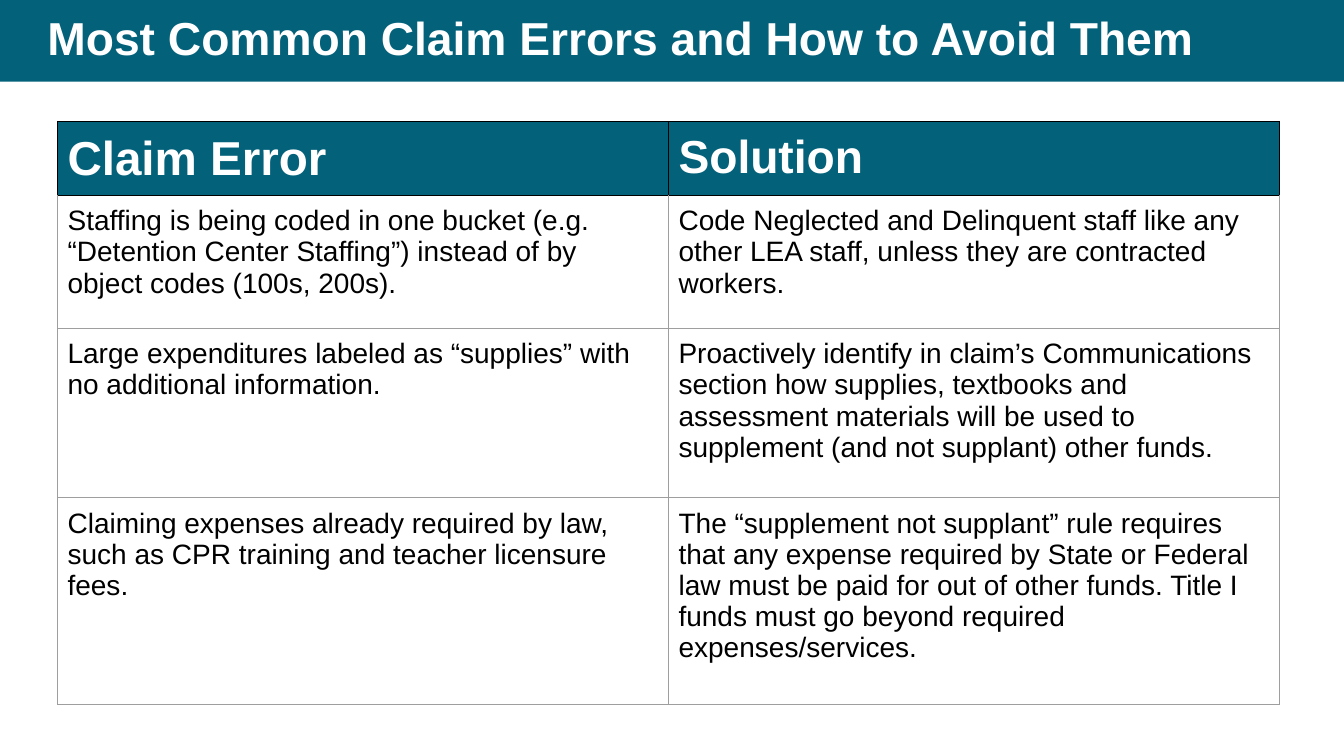
"""Build a slide that pairs common claim errors with their solutions."""
from lxml import etree
from pptx import Presentation
from pptx.dml.color import RGBColor
from pptx.enum.shapes import MSO_SHAPE as Shape
from pptx.enum.text import MSO_ANCHOR as Anchor, PP_ALIGN as Align
from pptx.oxml.ns import qn
from pptx.util import Inches, Pt

COLORS = {"teal": "03617A", "white": "FFFFFF", "black": "000000", "gray": "9E9E9E"}
FONT = "Arial"
TITLE = "Most Common Claim Errors and How to Avoid Them"
HEADINGS = [("Claim Error", 34), ("Solution", 33)]
ERRORS = [
    ("Staffing is being coded in one bucket (e.g. “Detention Center Staffing”) "
     "instead of by object codes (100s, 200s).",
     "Code Neglected and Delinquent staff like any other LEA staff, "
     "unless they are contracted workers."),
    ("Large expenditures labeled as “supplies” with no additional information.",
     "Proactively identify in claim’s Communications section how supplies, "
     "textbooks and assessment materials will be used to supplement "
     "(and not supplant) other funds."),
    ("Claiming expenses already required by law, such as CPR training "
     "and teacher licensure fees.",
     "The “supplement not supplant” rule requires that any expense required by "
     "State or Federal law must be paid for out of other funds. Title I funds "
     "must go beyond required expenses/services."),
]
ROW_HEIGHTS = [0.72, 1.32, 1.68, 2.05]
COLUMN_WIDTH = 6.06
BAND_HEIGHT = 0.81


def rgb(name):
    """Return the named palette colour."""
    return RGBColor.from_string(COLORS[name])


def write(frame, text, size=20, color="black", bold=False, spacing=1.0):
    """Write one formatted paragraph into a text frame."""
    frame.word_wrap = True
    paragraph = frame.paragraphs[0]
    paragraph.alignment = Align.LEFT
    paragraph.line_spacing = spacing
    run = paragraph.add_run()
    run.text = text
    run.font.name = FONT
    run.font.size = Pt(size)
    run.font.bold = bold
    run.font.color.rgb = rgb(color)


def add_band(slide, width):
    """Add the header band behind everything else."""
    band = slide.shapes.add_shape(Shape.RECTANGLE, 0, 0, width, Inches(BAND_HEIGHT))
    band.shadow.inherit = False
    band.fill.solid()
    band.fill.fore_color.rgb = rgb("teal")
    band.line.fill.background()
    slide.shapes._spTree.insert(2, band._element)


def set_title(slide):
    """Place and fill the title placeholder."""
    title = slide.shapes.title
    title.left, title.top = Inches(0.37), Inches(0)
    title.width, title.height = Inches(12.32), Inches(BAND_HEIGHT)
    title.text_frame.vertical_anchor = Anchor.MIDDLE
    write(title.text_frame, TITLE, size=33, color="white", bold=True, spacing=0.9)


def set_borders(cell, top, others):
    """Draw the four cell borders, the top one in its own colour."""
    properties = cell._tc.get_or_add_tcPr()
    sides = [("a:lnL", others), ("a:lnR", others), ("a:lnT", top), ("a:lnB", others)]
    for position, (side, color) in enumerate(sides):
        line = etree.Element(qn(side), w=str(Pt(0.75)))
        fill = etree.SubElement(line, qn("a:solidFill"))
        etree.SubElement(fill, qn("a:srgbClr"), val=COLORS[color])
        properties.insert(position, line)


def fill_cell(cell, text, fill="white", top="gray", others="gray", **text_format):
    """Format one table cell and write its text."""
    cell.margin_left = cell.margin_right = Inches(0.1)
    cell.margin_top = cell.margin_bottom = Inches(0.1)
    cell.vertical_anchor = Anchor.TOP
    cell.fill.solid()
    cell.fill.fore_color.rgb = rgb(fill)
    set_borders(cell, top, others)
    write(cell.text_frame, text, **text_format)


def add_error_table(slide):
    """Add the table of errors and solutions."""
    frame = slide.shapes.add_table(
        len(ROW_HEIGHTS), len(HEADINGS), Inches(0.57), Inches(1.21),
        Inches(COLUMN_WIDTH * len(HEADINGS)), Inches(sum(ROW_HEIGHTS)))
    table = frame.table
    table.horz_banding = False
    for column in table.columns:
        column.width = Inches(COLUMN_WIDTH)
    for row, height in zip(table.rows, ROW_HEIGHTS):
        row.height = Inches(height)
    for column, (heading, size) in enumerate(HEADINGS):
        fill_cell(table.cell(0, column), heading, fill="teal", top="black",
                  others="black", size=size, color="white", bold=True)
    for row, pair in enumerate(ERRORS, start=1):
        for column, text in enumerate(pair):
            fill_cell(table.cell(row, column), text,
                      top="black" if row == 1 else "gray")


def main():
    """Build and save the slide."""
    deck = Presentation()
    deck.slide_width, deck.slide_height = Inches(13.33), Inches(7.5)
    slide = deck.slides.add_slide(deck.slide_layouts[5])
    add_band(slide, deck.slide_width)
    set_title(slide)
    add_error_table(slide)
    deck.save("out.pptx")


if __name__ == "__main__":
    main()
